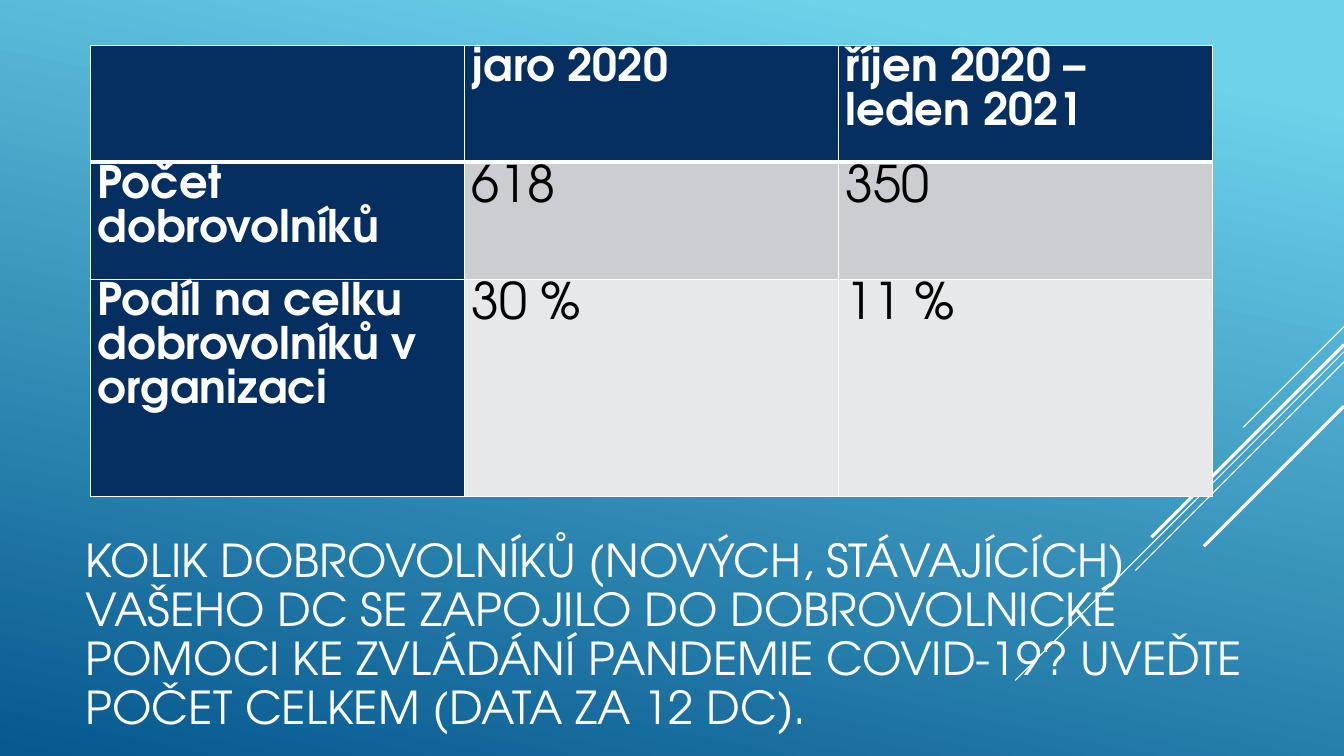
from lxml import etree
from pptx import Presentation
from pptx import util as u
from pptx.dml.color import RGBColor
from pptx.enum import shapes, text
from pptx.oxml.ns import qn

FONT = "TeX Gyre Adventor"
COLORS = {
    "white": "FFFFFF", "black": "000000", "navy": "052F61",
    "band_dark": "CCCDD2", "band_light": "E7E8EA",
    "sky": "6ED2EB", "deep": "06588E",
}

TITLE = ("KOLIK DOBROVOLNÍKŮ (NOVÝCH, STÁVAJÍCÍCH) VAŠEHO DC SE ZAPOJILO "
         "DO DOBROVOLNICKÉ POMOCI KE ZVLÁDÁNÍ PANDEMIE COVID-19? UVEĎTE "
         "POČET CELKEM (DATA ZA 12 DC).")
ROWS = [
    ["", "jaro 2020", "říjen 2020 – leden 2021"],
    ["Počet dobrovolníků", "618", "350"],
    ["Podíl na celku dobrovolníků v organizaci", "30 %", "11 %"],
]
ROW_HEIGHTS = [1.16, 1.16, 2.16]

# Diagonal stripes: height at the right edge, horizontal run, line width
STRIPES = [(3.24, 1.0, 0.75), (3.49, 3.26, 0.75), (3.59, 2.07, 0.75),
           (3.42, 1.91, 2.25), (4.03, 1.39, 2.25)]


def rgb(name):
    return RGBColor.from_string(COLORS[name])


class SlideBuilder:
    def __init__(self, deck):
        self.page = deck.slides.add_slide(deck.slide_layouts[5])
        self.right = deck.slide_width.inches

    def background(self, start, end, angle):
        fill = self.page.background.fill
        fill.gradient()
        fill.gradient_angle = 360 - angle
        for stop, color, position in zip(fill.gradient_stops, (start, end), (0.1, 1)):
            stop.color.rgb = rgb(color)
            stop.position = position

    def style(self, para, size, color, bold=False, spacing=0.9):
        para.alignment = text.PP_ALIGN.LEFT
        para.line_spacing = spacing
        for span in para.runs:
            span.font.name = FONT
            span.font.size = u.Pt(size)
            span.font.bold = bold
            span.font.color.rgb = rgb(color)

    def title(self, words, left, top, width, height):
        box = self.page.shapes.title
        box.left, box.top = u.Inches(left), u.Inches(top)
        box.width, box.height = u.Inches(width), u.Inches(height)
        frame = box.text_frame
        frame.text = words
        frame.word_wrap = True
        frame.auto_size = text.MSO_AUTO_SIZE.NONE
        frame.vertical_anchor = text.MSO_ANCHOR.MIDDLE
        frame.margin_bottom = u.Inches(0.59)
        self.style(frame.paragraphs[0], 32.4, "white")

    def stripe(self, top, run, width):
        line = self.page.shapes.add_connector(
            shapes.MSO_CONNECTOR.STRAIGHT, u.Inches(self.right), u.Inches(top),
            u.Inches(self.right - run), u.Inches(top + run))
        line.line.color.rgb = rgb("white")
        line.line.width = u.Pt(width)
        etree.SubElement(line.element.spPr, qn("a:effectLst"))

    def borders(self, cell, widths):
        props = cell._tc.get_or_add_tcPr()
        for index, (side, width) in enumerate(widths.items()):
            edge = etree.Element(qn(f"a:ln{side}"), w=str(u.Pt(width)))
            fill = etree.SubElement(edge, qn("a:solidFill"))
            etree.SubElement(fill, qn("a:srgbClr"), val=COLORS["white"])
            props.insert(index, edge)

    def table(self, rows, heights, left, top, width):
        grid = self.page.shapes.add_table(
            len(rows), len(rows[0]), u.Inches(left), u.Inches(top),
            u.Inches(width), u.Inches(sum(heights))).table
        for row, height in zip(grid.rows, heights):
            row.height = u.Inches(height)
        for r, values in enumerate(rows):
            for c, value in enumerate(values):
                self.cell(grid.cell(r, c), value, r, c)

    def cell(self, cell, value, row, column):
        heading = row == 0 or column == 0
        band = "band_dark" if row % 2 else "band_light"
        cell.fill.solid()
        cell.fill.fore_color.rgb = rgb("navy" if heading else band)
        cell.margin_left = cell.margin_right = u.Inches(0.07)
        cell.margin_top = cell.margin_bottom = 0
        cell.text = value
        self.style(cell.text_frame.paragraphs[0], 32 if heading else 36,
                   "white" if heading else "black", heading, 1.07)
        self.borders(cell, {"L": 1, "R": 1, "T": 3 if row == 1 else 1,
                            "B": 3 if row == 0 else 1})


def main():
    deck = Presentation()
    deck.slide_width, deck.slide_height = u.Inches(13.33), u.Inches(7.5)
    slide = SlideBuilder(deck)
    slide.background("sky", "deep", 102)
    # Decorative stripes behind the table
    for stripe in STRIPES:
        slide.stripe(*stripe)
    # Volunteer counts and the question
    slide.table(ROWS, ROW_HEIGHTS, 0.9, 0.45, 11.13)
    slide.title(TITLE, 0.75, 5.76, 11.76, 1.65)
    deck.save("out.pptx")


if __name__ == "__main__":
    main()
